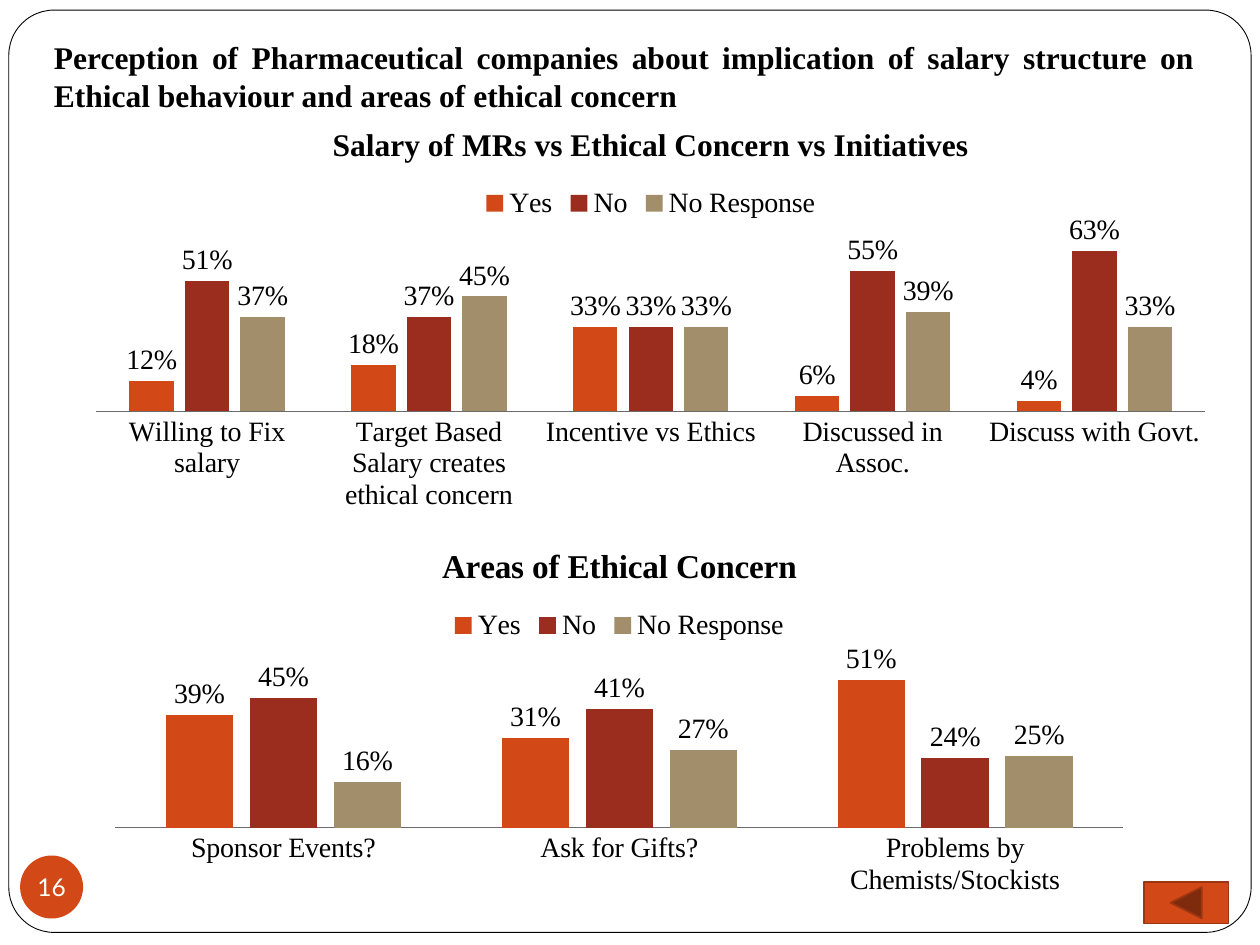
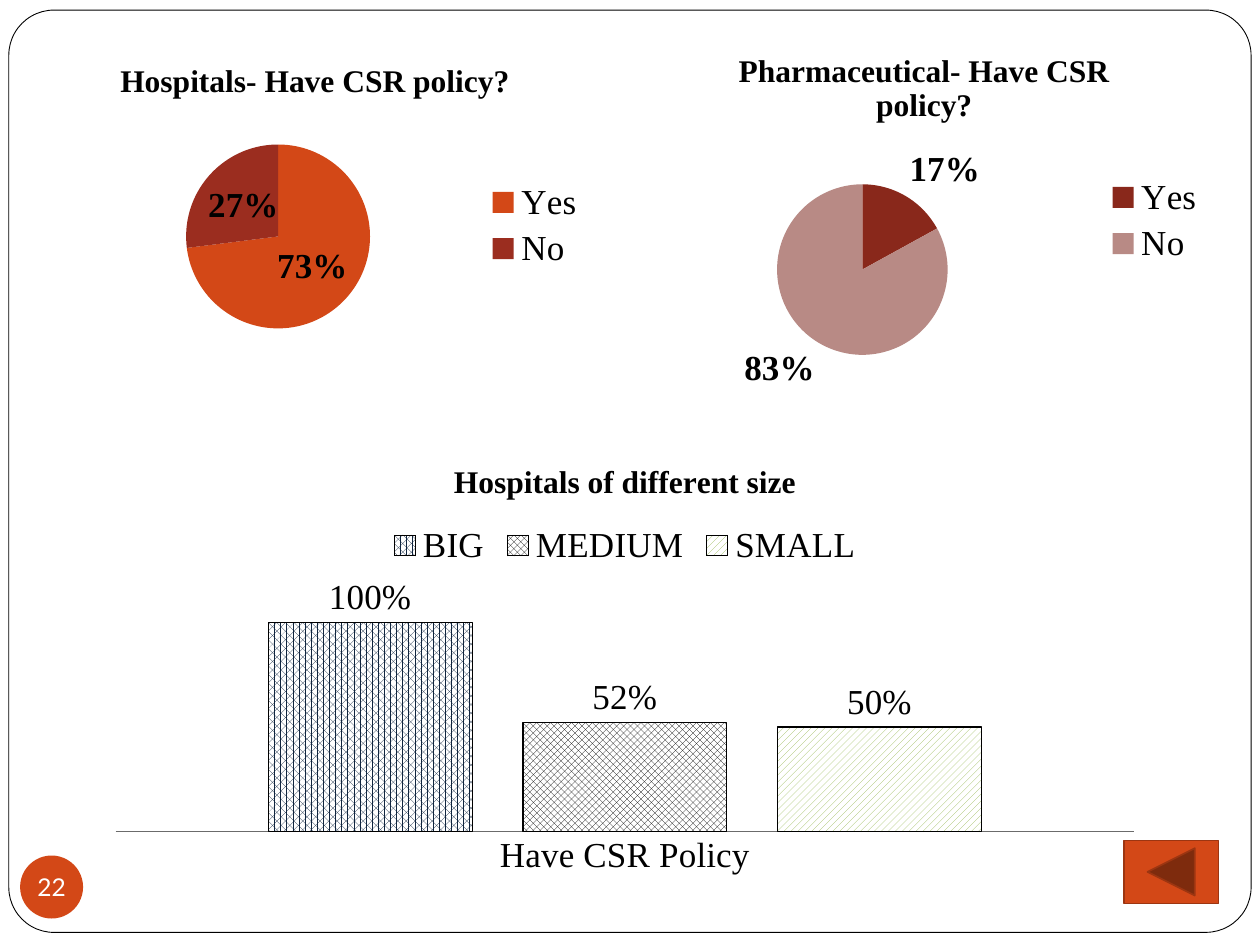
from dataclasses import dataclass

import lxml.etree
import pptx
import pptx.chart.data
import pptx.dml.color
import pptx.enum.chart
import pptx.enum.dml
import pptx.enum.shapes
import pptx.enum.text
import pptx.oxml
import pptx.oxml.ns
import pptx.util

Inches = pptx.util.Inches
Pt = pptx.util.Pt
ChartType = pptx.enum.chart.XL_CHART_TYPE
LegendPosition = pptx.enum.chart.XL_LEGEND_POSITION
LabelPosition = pptx.enum.chart.XL_LABEL_POSITION
Pattern = pptx.enum.dml.MSO_PATTERN
Shape = pptx.enum.shapes.MSO_SHAPE
Align = pptx.enum.text.PP_ALIGN


@dataclass(frozen=True)
class Theme:
    black: str = "000000"
    white: str = "FFFFFF"
    orange: str = "D34817"
    red: str = "9B2D1F"
    tan: str = "A28E6A"
    dark_red: str = "89281B"
    rose: str = "B88A85"
    navy: str = "0F243E"
    green: str = "9BBB59"
    button_edge: str = "9C3511"
    axis: str = "6B6B6B"
    font: str = "Times New Roman"
    number_font: str = "Lato"
    number: int = 14
    body: int = 16
    title: int = 18
    wide_title: int = 19
    large: int = 20


THEME = Theme()
ANSWER_FILLS = [THEME.orange, THEME.red, THEME.tan]
SIZE_PATTERNS = [
    (Pattern.PERCENT_70, THEME.navy),
    (Pattern.OUTLINED_DIAMOND, THEME.black),
    (Pattern.WIDE_UPWARD_DIAGONAL, THEME.green),
]


def rgb(colour):
    return pptx.dml.color.RGBColor.from_string(colour)


def style_font(font, size, colour=THEME.black, bold=False, name=THEME.font):
    font.size = Pt(size)
    font.bold = bold
    font.name = name
    font.color.rgb = rgb(colour)


def add_filled_shape(slide, kind, box, fill, edge=None, width=1):
    shape = slide.shapes.add_shape(kind, *map(Inches, box))
    shape.shadow.inherit = False
    shape.fill.solid()
    shape.fill.fore_color.rgb = rgb(fill)
    if edge:
        shape.line.color.rgb = rgb(edge)
        shape.line.width = Pt(width)
    else:
        shape.line.fill.background()
    return shape


def add_frame(slide, number):
    """Rounded page border and the round slide number."""
    border = add_filled_shape(slide, Shape.ROUNDED_RECTANGLE, (0.07, 0.08, 9.86, 7.32),
                              THEME.white, THEME.black, 0.5)
    border.adjustments[0] = 0.049
    badge = add_filled_shape(slide, Shape.OVAL, (0.16, 6.79, 0.5, 0.5), THEME.orange)
    frame = badge.text_frame
    frame.margin_left = frame.margin_right = frame.margin_top = frame.margin_bottom = 0
    frame.word_wrap = False
    frame.vertical_anchor = pptx.enum.text.MSO_ANCHOR.MIDDLE
    frame.text = number
    frame.paragraphs[0].alignment = Align.CENTER
    style_font(frame.paragraphs[0].runs[0].font, THEME.number, THEME.white,
               name=THEME.number_font)


def add_back_button(slide, box):
    add_filled_shape(slide, Shape.ACTION_BUTTON_BACK_OR_PREVIOUS, box,
                     THEME.orange, THEME.button_edge)


def add_heading(slide, box, text):
    frame = slide.shapes.add_textbox(*map(Inches, box)).text_frame
    frame.word_wrap = True
    frame.text = text
    frame.paragraphs[0].alignment = Align.JUSTIFY
    style_font(frame.paragraphs[0].runs[0].font, THEME.title, bold=True)


def add_titled_chart(slide, kind, box, title, categories, series, number_format,
                     legend_position, size, title_size=THEME.title):
    data = pptx.chart.data.CategoryChartData(number_format=number_format)
    data.categories = categories
    for name, values in series.items():
        data.add_series(name, values)
    chart = slide.shapes.add_chart(kind, *map(Inches, box), data).chart
    style_font(chart.font, size)
    chart.has_title = True
    chart.chart_title.include_in_layout = False
    chart.chart_title.text_frame.text = title
    style_font(chart.chart_title.text_frame.paragraphs[0].runs[0].font, title_size, bold=True)
    chart.has_legend = True
    chart.legend.position = legend_position
    chart.legend.include_in_layout = False
    style_font(chart.legend.font, size)
    return chart


def add_column_chart(slide, box, title, categories, series, size=THEME.body,
                     title_size=THEME.title):
    chart = add_titled_chart(slide, ChartType.COLUMN_CLUSTERED, box, title, categories,
                             series, "0%", LegendPosition.TOP, size, title_size)
    chart.value_axis.visible = False
    chart.value_axis.has_major_gridlines = False
    answers = chart.category_axis
    answers.major_tick_mark = pptx.enum.chart.XL_TICK_MARK.NONE
    answers.format.line.color.rgb = rgb(THEME.axis)
    style_font(answers.tick_labels.font, size)
    plot = chart.plots[0]
    plot.vary_by_categories = False
    plot.gap_width = 150
    plot.overlap = -25
    plot.has_data_labels = True
    labels = plot.data_labels
    labels.show_value = True
    labels.number_format = "0%"
    labels.number_format_is_linked = False
    labels.position = LabelPosition.OUTSIDE_END
    style_font(labels.font, size)
    return plot


def add_answer_columns(slide, box, title, categories, yes, no, no_response, **sizes):
    series = {"Yes": yes, "No": no, "No Response": no_response}
    plot = add_column_chart(slide, box, title, categories, series, **sizes)
    for answer, fill in zip(plot.series, ANSWER_FILLS):
        answer.format.fill.solid()
        answer.format.fill.fore_color.rgb = rgb(fill)


def add_hospital_size_columns(slide, box):
    plot = add_column_chart(slide, box, "Hospitals of different size", ["Have CSR Policy"],
                            {"BIG": [1], "MEDIUM": [0.52], "SMALL": [0.5]}, THEME.large)
    for hospital_size, (pattern, ink) in zip(plot.series, SIZE_PATTERNS):
        fill = hospital_size.format.fill
        fill.patterned()
        fill.pattern = pattern
        fill.fore_color.rgb = rgb(ink)
        fill.back_color.rgb = rgb(THEME.white)
        hospital_size.format.line.color.rgb = rgb(THEME.black)
        hospital_size.format.line.width = Pt(0.75)


def place_plot(chart, **fractions):
    """Set the inner plot area as fractions (x, y, w, h) of the chart."""
    qn = pptx.oxml.ns.qn
    plot_area = chart.plots[0]._element.getparent()
    for layout in plot_area.findall(qn("c:layout")):
        plot_area.remove(layout)
    layout = pptx.oxml.parse_xml(
        f'<c:layout {pptx.oxml.ns.nsdecls("c")}><c:manualLayout/></c:layout>')
    settings = {"layoutTarget": "inner", "xMode": "edge", "yMode": "edge", **fractions}
    for tag, value in settings.items():
        lxml.etree.SubElement(layout[0], qn(f"c:{tag}")).set("val", str(value))
    plot_area.insert(0, layout)


def add_policy_pie(slide, box, title, shares, fills, label_position, plot_box):
    chart = add_titled_chart(slide, ChartType.PIE, box, title, ["Yes", "No"],
                             {"Series 1": shares}, "General", LegendPosition.RIGHT,
                             THEME.large)
    place_plot(chart, **plot_box)
    pie = chart.plots[0]
    for index, fill in enumerate(fills):
        slice_fill = pie.series[0].points[index].format.fill
        slice_fill.solid()
        slice_fill.fore_color.rgb = rgb(fill)
    pie.has_data_labels = True
    labels = pie.data_labels
    labels.show_value = False
    labels.show_percentage = True
    labels.number_format = "0%"
    labels.number_format_is_linked = False
    labels.position = label_position
    style_font(labels.font, THEME.large, bold=True)


def build_ethics_slide(slide):
    add_frame(slide, "16")
    add_heading(slide, (0.33, 0.25, 9.25, 0.71),
                "Perception of Pharmaceutical companies about implication of salary "
                "structure on Ethical behaviour and areas of ethical concern")
    add_back_button(slide, (9.08, 7, 0.67, 0.33))
    add_answer_columns(
        slide, (0.58, 0.83, 9.17, 3.29), "Salary of MRs vs Ethical Concern vs Initiatives",
        ["Willing to Fix salary", "Target Based Salary creates ethical concern",
         "Incentive vs Ethics", "Discussed in Assoc.", "Discuss with Govt."],
        yes=[0.12, 0.18, 0.33, 0.06, 0.04],
        no=[0.51, 0.37, 0.33, 0.55, 0.63],
        no_response=[0.37, 0.45, 0.33, 0.39, 0.33])
    add_answer_columns(
        slide, (0.75, 4.17, 8.33, 3), "Areas of Ethical Concern",
        ["Sponsor Events?", "Ask for Gifts?", "Problems by Chemists/Stockists"],
        yes=[0.39, 0.31, 0.51],
        no=[0.45, 0.41, 0.24],
        no_response=[0.16, 0.27, 0.25],
        title_size=THEME.wide_title)


def build_policy_slide(slide):
    add_frame(slide, "22")
    add_policy_pie(slide, (0.25, 0.33, 4.5, 2.92), "Hospitals- Have CSR policy?",
                   [73, 27], [THEME.orange, THEME.red], LabelPosition.CENTER,
                   {"x": 0.27, "y": 0.28, "w": 0.33, "h": 0.5})
    add_policy_pie(slide, (5, 0.25, 4.67, 3), "Pharmaceutical- Have CSR policy?",
                   [17, 83], [THEME.dark_red, THEME.rose], LabelPosition.OUTSIDE_END,
                   {"x": 0.25, "y": 0.4, "w": 0.29, "h": 0.46})
    add_hospital_size_columns(slide, (0.75, 3.5, 8.42, 3.52))
    add_back_button(slide, (8.92, 6.67, 0.75, 0.5))


def main():
    deck = pptx.Presentation()
    deck.slide_width = Inches(10)
    deck.slide_height = Inches(7.5)
    blank = deck.slide_layouts[6]
    for build in (build_ethics_slide, build_policy_slide):
        build(deck.slides.add_slide(blank))
    deck.save("out.pptx")


if __name__ == "__main__":
    main()
